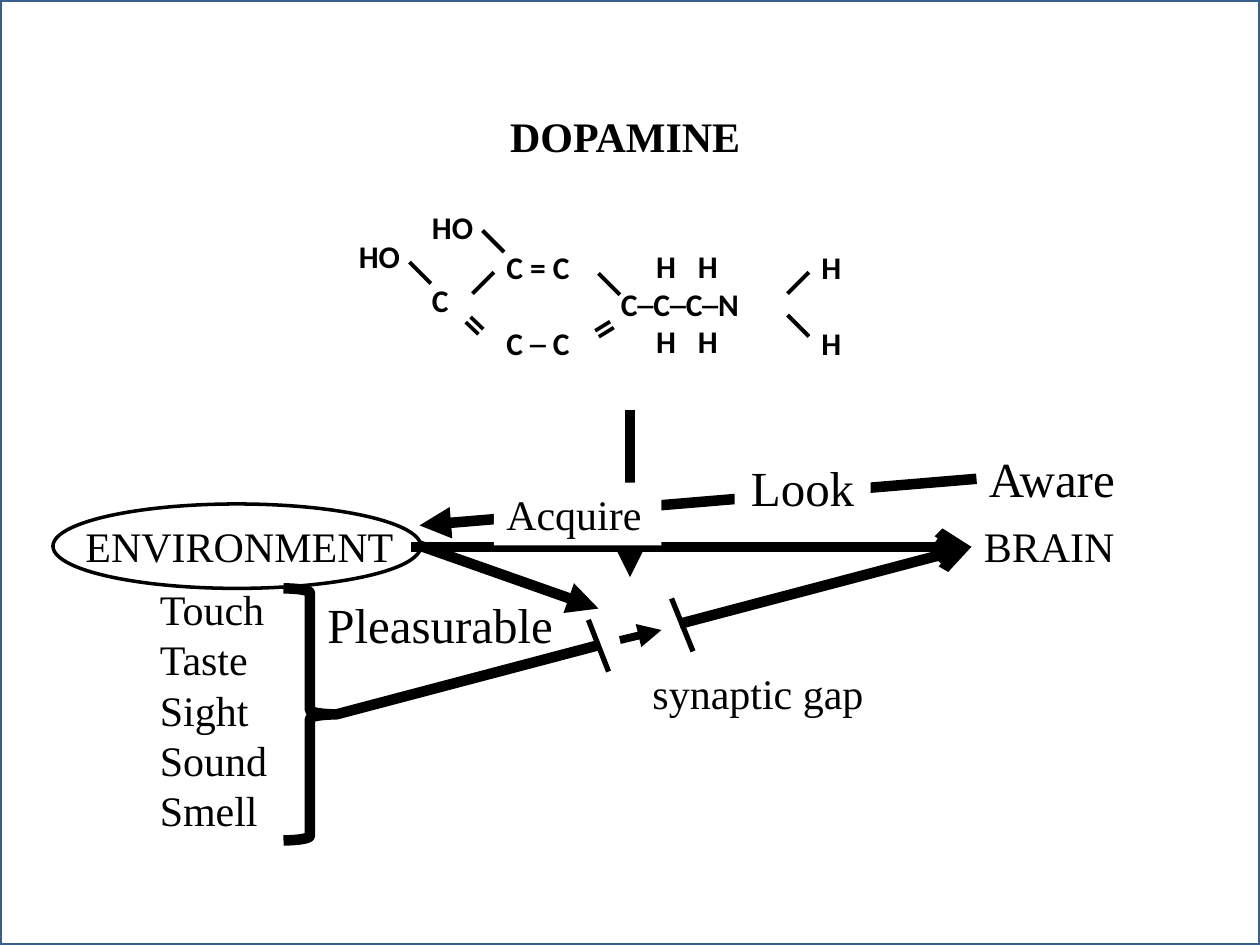
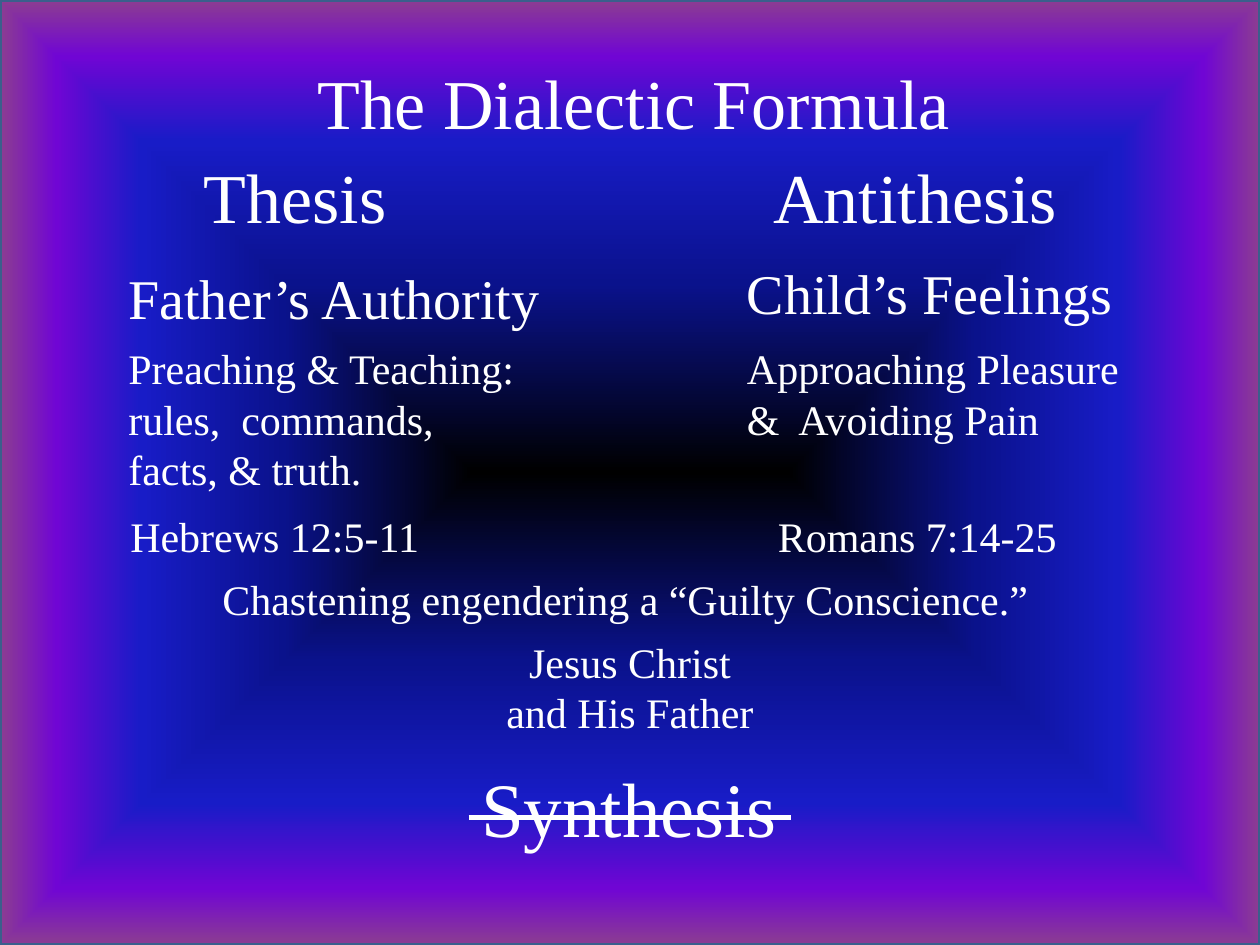
from dataclasses import dataclass
from typing import Any

from lxml.etree import SubElement
from pptx import Presentation
from pptx.dml.color import RGBColor
from pptx.enum.shapes import MSO_CONNECTOR, MSO_SHAPE
from pptx.enum.text import MSO_AUTO_SIZE, PP_ALIGN
from pptx.oxml import parse_xml
from pptx.oxml.ns import nsdecls, qn
from pptx.util import Emu, Pt

PX = 9144  # 100 px to the inch
PAGE_WIDTH, PAGE_HEIGHT = 1000, 750

BLACK = RGBColor(0x00, 0x00, 0x00)
WHITE = RGBColor(0xFF, 0xFF, 0xFF)
FRAME_BLUE = RGBColor(0x3A, 0x5F, 0x8C)
GLOW = [
    (0, BLACK),
    (40, RGBColor(0x0A, 0x12, 0x8C)),
    (70, RGBColor(0x18, 0x1C, 0xC7)),
    (88, RGBColor(0x70, 0x05, 0xD4)),
    (100, RGBColor(0x8C, 0x3D, 0x91)),
]
SERIF, SANS = "Times New Roman", "Calibri"


def px(value):
    return Emu(value * PX)


@dataclass
class Box:
    """A region: draws parts at px distances from its own corner."""
    shapes: Any
    left: int = 0
    top: int = 0
    ink: RGBColor = BLACK

    def text(self, left, top, width, height, paras, size=24, font=SERIF,
             bold=False, align=PP_ALIGN.LEFT, wrap=False):
        shape = self.shapes.add_textbox(
            px(self.left + left), px(self.top + top), px(width), px(height))
        frame = shape.text_frame
        frame.word_wrap = wrap
        frame.auto_size = MSO_AUTO_SIZE.SHAPE_TO_FIT_TEXT
        for index, wording in enumerate(paras.split("\n")):
            para = frame.add_paragraph() if index else frame.paragraphs[0]
            para.alignment = align
            for part, line in enumerate(wording.split("|")):
                if part:
                    para.add_line_break()
                span = para.add_run()
                span.text = line
                span.font.name, span.font.size = font, Pt(size)
                span.font.bold = bold
                span.font.color.rgb = self.ink
        return shape

    def shape(self, kind, left, top, width, height, fill=None, line=None,
              weight=2):
        shape = self.shapes.add_shape(
            kind, px(self.left + left), px(self.top + top),
            px(width), px(height))
        shape.shadow.inherit = False
        if fill is None:
            shape.fill.background()
        else:
            shape.fill.solid()
            shape.fill.fore_color.rgb = fill
        if line is None:
            shape.line.fill.background()
        else:
            shape.line.color.rgb = line
            shape.line.width = Pt(weight)
        return shape

    def line(self, x1, y1, x2, y2, weight, arrow=None):
        line = self.shapes.add_connector(
            MSO_CONNECTOR.STRAIGHT, px(self.left + x1), px(self.top + y1),
            px(self.left + x2), px(self.top + y2))
        line.line.color.rgb = self.ink
        line.line.width = Pt(weight)
        properties = line._element.spPr
        if arrow:
            SubElement(properties.find(qn("a:ln")), qn("a:tailEnd"), type=arrow)
        SubElement(properties, qn("a:effectLst"))


def framed_page(deck):
    page = deck.slides.add_slide(deck.slide_layouts[6])
    frame = Box(page.shapes).shape(
        MSO_SHAPE.RECTANGLE, 0, 0, PAGE_WIDTH, PAGE_HEIGHT, WHITE, FRAME_BLUE)
    return page, frame


def glow_fill(shape):
    """Rectangular gradient spreading from the centre."""
    stops = "".join(
        f'<a:gs pos="{position * 1000}"><a:srgbClr val="{colour}"/></a:gs>'
        for position, colour in GLOW)
    gradient = parse_xml(
        f'<a:gradFill {nsdecls("a")} rotWithShape="1"><a:gsLst>{stops}</a:gsLst>'
        '<a:path path="rect"><a:fillToRect l="50000" t="50000" r="50000" '
        'b="50000"/></a:path></a:gradFill>')
    properties = shape._element.spPr
    properties.replace(properties.find(qn("a:solidFill")), gradient)


def set_tabs(para, stops):
    tabs = SubElement(para._p.get_or_add_pPr(), qn("a:tabLst"))
    for stop in stops:
        SubElement(tabs, qn("a:tab"), pos=str(px(stop)), algn="l")


def molecule(box):
    box.shape(MSO_SHAPE.RECTANGLE, 0, 0, 467, 217, WHITE)
    # Side chain with hydrogens above and below
    chain = box.text(216, 83, 145, 100, "\tH\tH\nC─C─C─N\n\tH\tH", 18, SANS, True)
    for para in chain.text_frame.paragraphs[::2]:
        set_tabs(para, (28, 61))
    # Atoms
    for left, top, width, atoms in [
        (375, 84, 38, "H"), (375, 144, 38, "H"),
        (125, 84, 85, "C = C"), (125, 144, 88, "C ─ C"),
        (66, 110, 38, "C"), (8, 75, 58, "HO"), (66, 52, 58, "HO"),
    ]:
        box.text(left, top, width, 40, atoms, 18, SANS, True)
    # Single bonds, each 17 px across, falling (1) or rising (-1)
    for left, top, slope in [(358, 142, 1), (358, 125, -1), (208, 109, 1),
                             (108, 125, -1), (58, 100, 1), (116, 75, 1)]:
        box.line(left, top, left + 17, top + 17 * slope, 2.25)
    # Slanted double bonds
    for left, angle in [(93, 43.7), (193, 328.5)]:
        box.text(left, 125, 40, 50, "=", 24, SANS, True).rotation = angle
    box.text(128, -25, 205, 51, "DOPAMINE", bold=True)


def senses(box):
    box.shape(MSO_SHAPE.OVAL, 0, 0, 292, 67, line=BLACK)
    box.text(16, 8, 267, 50, "ENVIRONMENT")
    box.text(75, 58, 106, 212, "Touch\nTaste\nSight\nSound\nSmell")
    box.shape(MSO_SHAPE.RIGHT_BRACE, 183, 67, 42, 200, line=BLACK, weight=6)


def pathways(box):
    # Routes to the brain
    box.line(0, 34, 445, 34, 6, "arrow")
    box.line(-59, 167, 445, 34, 6, "arrow")
    box.text(445, 8, 125, 50, "BRAIN")
    # Synaptic gap cut out of the lower route
    box.shape(MSO_SHAPE.RECTANGLE, 149, 90, 64, 29, WHITE, WHITE).rotation = 342.3
    box.line(141, 92, 157, 133, 3)
    box.line(207, 75, 224, 117, 3)
    box.line(166, 108, 199, 100, 4.5, "triangle")
    box.text(182, 125, 189, 50, "synaptic gap")


def response(box):
    box.text(442, 0, 133, 57, "Aware", 28, wrap=True)
    # Return path, pleasure path and dopamine release
    for ends in [(442, 29, 0, 66), (0, 82, 142, 132), (167, -26, 167, 107)]:
        box.line(*ends, 6, "triangle")
    # Labels that interrupt the arrows
    for left, top, width, height, word, size, align in [
        (250, 7, 108, 57, "Look", 28, PP_ALIGN.CENTER),
        (59, 32, 133, 50, "Acquire", 24, PP_ALIGN.LEFT),
    ]:
        label = box.text(left, top, width, height, word, size,
                         align=align, wrap=True)
        label.fill.solid()
        label.fill.fore_color.rgb = WHITE
    box.text(-83, 116, 201, 57, "Pleasurable", 28)


def dopamine_slide(deck):
    page, _ = framed_page(deck)
    molecule(Box(page.shapes.add_group_shape().shapes, 267, 108))
    senses(Box(page.shapes, 42, 400))
    pathways(Box(page.shapes, 326, 400))
    response(Box(page.shapes, 333, 351))


def thesis_column(box):
    box.text(60, 0, 167, 77, "Thesis", 40)
    box.text(0, 87, 350, 64, "Father’s Authority", 32)
    box.text(0, 150, 329, 131,
             "Preaching & Teaching:\nrules,  commands,\nfacts, & truth.")
    box.text(0, 283, 252, 50, "Hebrews 12:5-11", align=PP_ALIGN.CENTER)


def antithesis_column(box):
    box.text(21, 0, 248, 77, "Antithesis", 40)
    box.text(0, 83, 313, 64, "Child’s Feelings", 32)
    box.text(0, 150, 318, 91, "Approaching Pleasure|&  Avoiding Pain")
    box.text(23, 283, 244, 50, "Romans 7:14-25", align=PP_ALIGN.CENTER)


def conclusion(box):
    box.text(0, 0, 687, 50, "Chastening engendering a “Guilty Conscience.” ",
             align=PP_ALIGN.CENTER)
    box.text(234, 50, 218, 91, "Jesus Christ|and His Father",
             align=PP_ALIGN.CENTER)
    # Struck-out synthesis
    box.text(215, 149, 257, 84, "Synthesis", 44)
    box.line(215, 199, 471, 199, 3)


def dialectic_slide(deck):
    page, frame = framed_page(deck)
    glow_fill(frame)
    Box(page.shapes, ink=WHITE).text(
        242, 42, 528, 77, "The Dialectic Formula", 40)
    thesis_column(Box(page.shapes, 92, 117, WHITE))
    antithesis_column(Box(page.shapes, 583, 117, WHITE))
    conclusion(Box(page.shapes, 157, 450, WHITE))


def main():
    deck = Presentation()
    deck.slide_width, deck.slide_height = px(PAGE_WIDTH), px(PAGE_HEIGHT)
    dopamine_slide(deck)
    dialectic_slide(deck)
    deck.save("out.pptx")


if __name__ == "__main__":
    main()
